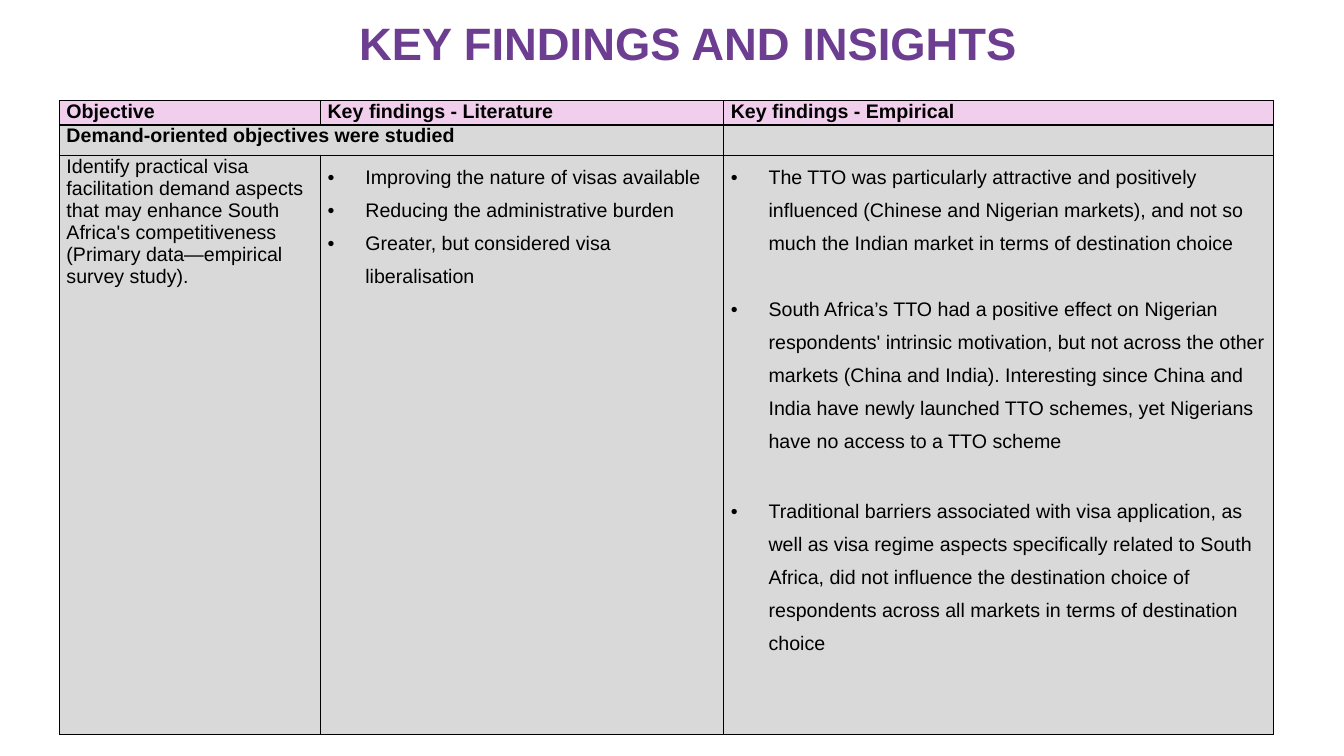
"""Build the key findings and insights slide."""
from dataclasses import dataclass

from lxml.etree import SubElement
from pptx import Presentation
from pptx.dml.color import RGBColor
from pptx.enum.text import MSO_ANCHOR, PP_ALIGN
from pptx.oxml.ns import qn
from pptx.util import Pt


@dataclass(frozen=True)
class Theme:
    """Colours, font and type sizes of the slide."""
    font: str = "Arial"
    title_size: float = 32.4
    body_size: float = 14
    title: str = "6C3D91"
    ink: str = "000000"
    header_fill: str = "F2CEED"
    body_fill: str = "D9D9D9"


THEME = Theme()
COLUMN_WIDTHS = (186.5, 288, 392.4)
ROW_HEIGHTS = (17.3, 20.2, 414)
HEADERS = ("Objective", "Key findings - Literature", "Key findings - Empirical")
SECTION = ("Demand-oriented objectives were studied", "", "")
OBJECTIVE = (
    "Identify practical visa facilitation demand aspects that may enhance "
    "South Africa's competitiveness (Primary data—empirical survey study)."
)
LITERATURE = (
    ("Improving the nature of visas available", 0),
    ("Reducing the administrative burden", 0),
    ("Greater, but considered visa liberalisation", 0),
)
EMPIRICAL = (
    ("The TTO was particularly attractive and positively influenced (Chinese and "
     "Nigerian markets), and not so much the Indian market in terms of "
     "destination choice", 0),
    ("South Africa’s TTO had a positive effect on Nigerian respondents' intrinsic "
     "motivation, but not across the other markets (China and India). Interesting "
     "since China and India have newly launched TTO schemes, yet Nigerians have "
     "no access to a TTO scheme", 23.6),
    ("Traditional barriers associated with visa application, as well as visa "
     "regime aspects specifically related to South Africa, did not influence the "
     "destination choice of respondents across all markets in terms of "
     "destination choice", 26.6),
)


def write_text(paragraph, text, size=THEME.body_size, color=THEME.ink, bold=False,
               align=PP_ALIGN.LEFT, line_spacing=1.0, space_before=0):
    """Write one formatted run into a paragraph."""
    paragraph.alignment = align
    paragraph.line_spacing = line_spacing
    paragraph.space_before = Pt(space_before)
    run = paragraph.add_run()
    run.text = text
    run.font.name = THEME.font
    run.font.size = Pt(size)
    run.font.bold = bold
    run.font.color.rgb = RGBColor.from_string(color)


def set_margins(holder, horizontal=0):
    """Set the side margins of a cell or text frame and clear the others."""
    holder.margin_left = holder.margin_right = Pt(horizontal)
    holder.margin_top = holder.margin_bottom = 0


def add_bullet(paragraph, indent=27):
    """Give a paragraph a round bullet with a hanging indent."""
    properties = paragraph._p.get_or_add_pPr()
    properties.set("marL", str(Pt(indent)))
    properties.set("indent", str(-Pt(indent)))
    SubElement(properties, qn("a:buFont"), typeface=THEME.font)
    SubElement(properties, qn("a:buChar"), char="•")


def write_bullets(cell, items):
    """Fill a cell with bulleted paragraphs and their spaces before."""
    frame = cell.text_frame
    for index, (text, gap) in enumerate(items):
        paragraph = frame.add_paragraph() if index else frame.paragraphs[0]
        add_bullet(paragraph)
        write_text(paragraph, text, line_spacing=1.5, space_before=gap)


def style_cell(cell, fill):
    """Set the margins, borders and fill of a cell."""
    set_margins(cell, 5)
    properties = cell._tc.get_or_add_tcPr()
    for side in ("lnL", "lnR", "lnT", "lnB"):
        line = SubElement(properties, qn(f"a:{side}"), w=str(Pt(1)))
        solid = SubElement(line, qn("a:solidFill"))
        SubElement(solid, qn("a:srgbClr"), val=THEME.ink)
    cell.fill.solid()
    cell.fill.fore_color.rgb = RGBColor.from_string(fill)


def add_title(slide, text):
    """Add the centred slide title."""
    frame = slide.shapes.add_textbox(Pt(121.7), Pt(13.7), Pt(739.4), Pt(38.2)).text_frame
    frame.word_wrap = True
    frame.vertical_anchor = MSO_ANCHOR.MIDDLE
    set_margins(frame)
    write_text(frame.paragraphs[0], text, size=THEME.title_size, color=THEME.title,
               bold=True, align=PP_ALIGN.CENTER, line_spacing=0.9)


def add_findings_table(slide):
    """Add the table of objectives and findings."""
    table = slide.shapes.add_table(
        len(ROW_HEIGHTS), len(COLUMN_WIDTHS), Pt(42.5), Pt(72),
        Pt(sum(COLUMN_WIDTHS)), Pt(sum(ROW_HEIGHTS))).table
    table.first_row = table.horz_banding = False
    for column, width in zip(table.columns, COLUMN_WIDTHS):
        column.width = Pt(width)
    for row, height in zip(table.rows, ROW_HEIGHTS):
        row.height = Pt(height)
    fills = (THEME.header_fill, THEME.body_fill, THEME.body_fill)
    for row, fill in zip(table.rows, fills):
        for cell in row.cells:
            style_cell(cell, fill)
    for row_index, texts in enumerate((HEADERS, SECTION)):
        for column_index, text in enumerate(texts):
            cell = table.cell(row_index, column_index)
            write_text(cell.text_frame.paragraphs[0], text, bold=True)
    table.cell(1, 0).merge(table.cell(1, 1))
    write_text(table.cell(2, 0).text_frame.paragraphs[0], OBJECTIVE)
    write_bullets(table.cell(2, 1), LITERATURE)
    write_bullets(table.cell(2, 2), EMPIRICAL)


def main():
    """Create and save the presentation."""
    presentation = Presentation()
    presentation.slide_width, presentation.slide_height = Pt(960), Pt(540)
    slide = presentation.slides.add_slide(presentation.slide_layouts[6])
    add_title(slide, "KEY FINDINGS AND INSIGHTS")
    add_findings_table(slide)
    presentation.save("out.pptx")


if __name__ == "__main__":
    main()
